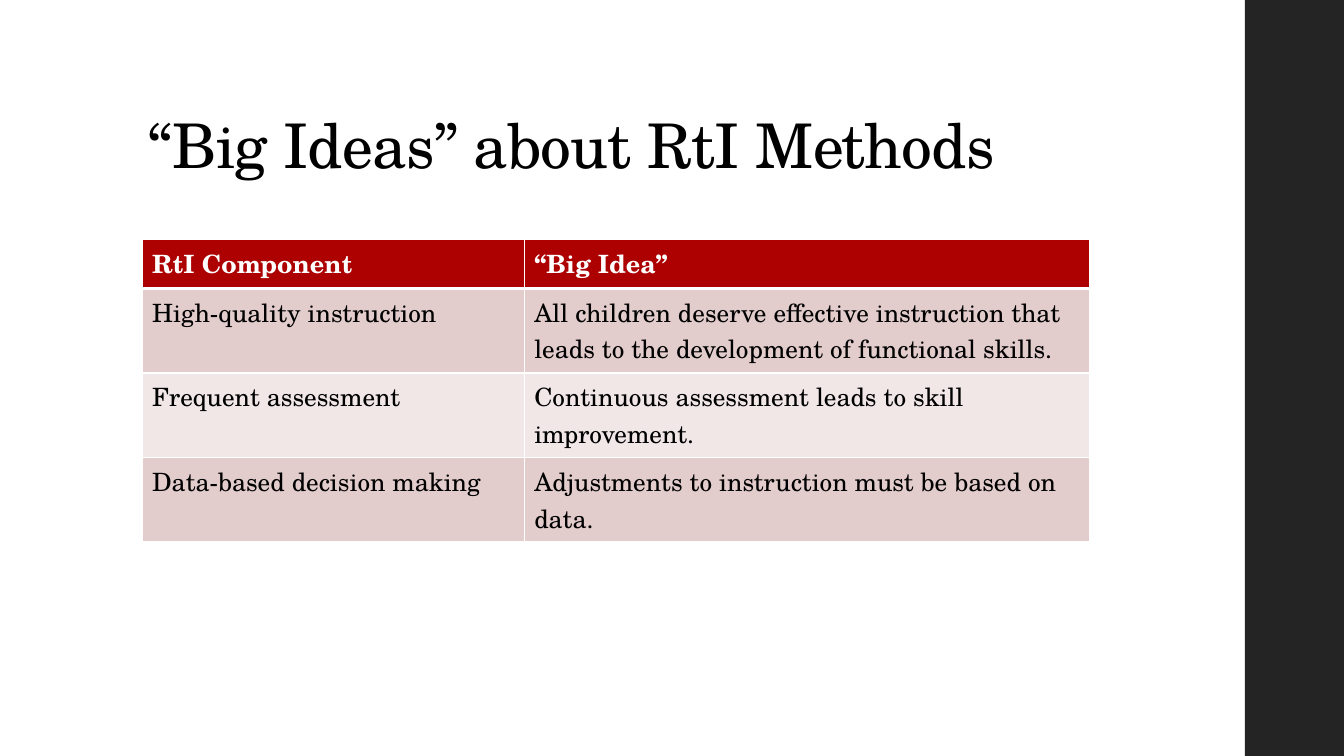
import lxml.etree
import pptx
import pptx.dml.color
import pptx.enum.shapes
import pptx.enum.text
import pptx.oxml.ns
import pptx.util

Cm = pptx.util.Cm
Pt = pptx.util.Pt

FONT = "TeX Gyre Schola"
BLACK, WHITE = "000000", "FFFFFF"
SIDEBAR_COLOR = "242424"
HEADER_COLOR = "AD0101"
BAND_COLORS = ["E3CCCC", "F1E7E7"]
COLUMN_WIDTHS = [9.63, 14.25]
HEADER_HEIGHT, ROW_HEIGHT = 1.2, 2.13

ROWS = [
    ["RtI Component", "“Big Idea”"],
    ["High-quality instruction",
     "All children deserve effective instruction that leads to the development of functional skills."],
    ["Frequent assessment", "Continuous assessment leads to skill improvement."],
    ["Data-based decision making", "Adjustments to instruction must be based on data."],
]


def color(hex_string):
    return pptx.dml.color.RGBColor.from_string(hex_string)


def write_text(text_frame, text, size, text_color=BLACK, bold=False, line_spacing=None, tracking=None):
    """Fill the frame with one formatted paragraph; tracking is in points."""
    paragraph = text_frame.paragraphs[0]
    paragraph.alignment = pptx.enum.text.PP_ALIGN.LEFT
    paragraph.line_spacing = line_spacing
    run = paragraph.add_run()
    run.text = text
    run.font.name = FONT
    run.font.size = Pt(size)
    run.font.bold = bold
    run.font.color.rgb = color(text_color)
    if tracking is not None:
        run.font._element.set("spc", str(round(tracking * 100)))


def set_border(cell, side, width):
    """Draw a white border on one side: L, R, T or B."""
    qualified = pptx.oxml.ns.qn
    properties = cell._tc.get_or_add_tcPr()
    line = lxml.etree.SubElement(properties, qualified(f"a:ln{side}"), w=str(Pt(width)))
    fill = lxml.etree.SubElement(line, qualified("a:solidFill"))
    lxml.etree.SubElement(fill, qualified("a:srgbClr"), val=WHITE)


def add_sidebar(slide, left, top, width, height):
    sidebar = slide.shapes.add_shape(
        pptx.enum.shapes.MSO_SHAPE.RECTANGLE, Cm(left), Cm(top), Cm(width), Cm(height))
    sidebar.shadow.inherit = False
    sidebar.fill.solid()
    sidebar.fill.fore_color.rgb = color(SIDEBAR_COLOR)
    sidebar.line.fill.background()


def place_title(slide, text, left, top, width, height):
    title = slide.shapes.title
    title.left, title.top, title.width, title.height = Cm(left), Cm(top), Cm(width), Cm(height)
    title.text_frame.word_wrap = True
    title.text_frame.auto_size = pptx.enum.text.MSO_AUTO_SIZE.NONE
    title.text_frame.vertical_anchor = pptx.enum.text.MSO_ANCHOR.BOTTOM
    write_text(title.text_frame, text, 44, line_spacing=0.9, tracking=-0.5)


def format_cell(cell, text, row_index):
    is_header = row_index == 0
    borders = {"L": 1, "R": 1, "T": 3 if row_index == 1 else 1, "B": 3 if is_header else 1}
    for side, width in borders.items():
        set_border(cell, side, width)
    cell.fill.solid()
    cell.fill.fore_color.rgb = color(HEADER_COLOR if is_header else BAND_COLORS[(row_index - 1) % 2])
    write_text(cell.text_frame, text, 18, text_color=WHITE if is_header else BLACK, bold=is_header)


def add_ideas_table(slide, left, top):
    heights = [HEADER_HEIGHT] + [ROW_HEIGHT] * (len(ROWS) - 1)
    table = slide.shapes.add_table(
        len(ROWS), len(COLUMN_WIDTHS), Cm(left), Cm(top),
        Cm(sum(COLUMN_WIDTHS)), Cm(sum(heights))).table
    for column, width in zip(table.columns, COLUMN_WIDTHS):
        column.width = Cm(width)
    for row_index, (row, height, texts) in enumerate(zip(table.rows, heights, ROWS)):
        row.height = Cm(height)
        for cell, text in zip(row.cells, texts):
            format_cell(cell, text, row_index)


def main():
    presentation = pptx.Presentation()
    presentation.slide_width, presentation.slide_height = Cm(33.87), Cm(19.05)
    slide = presentation.slides.add_slide(presentation.slide_layouts.get_by_name("Title Only"))
    add_sidebar(slide, 31.37, 0, 2.5, 19.05)
    place_title(slide, "“Big Ideas” about RtI Methods", 3.5, 1.02, 26.92, 3.68)
    add_ideas_table(slide, 3.58, 6.03)
    presentation.save("out.pptx")


if __name__ == "__main__":
    main()
